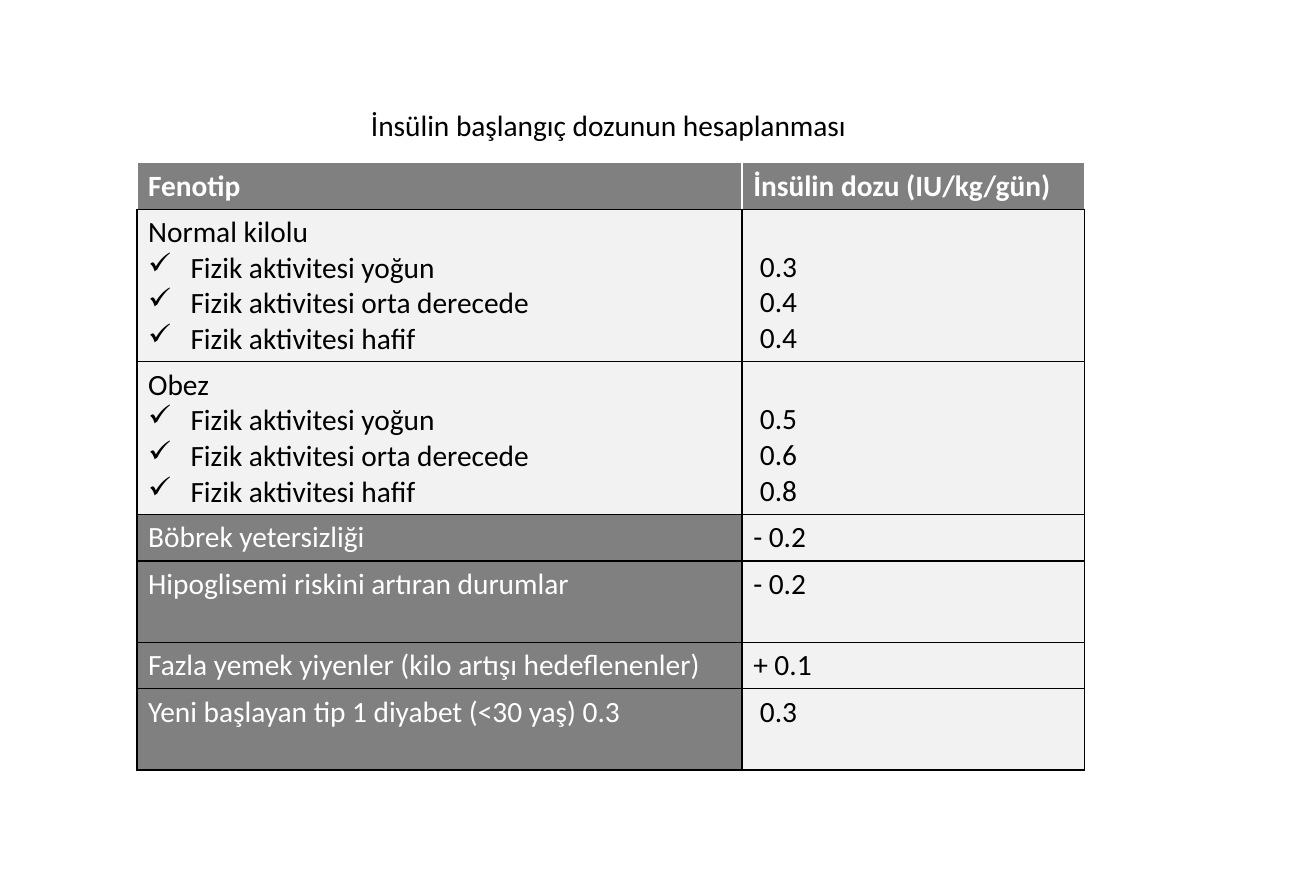
from dataclasses import dataclass

from lxml import etree
from pptx import Presentation
from pptx.dml.color import RGBColor
from pptx.enum.text import MSO_ANCHOR
from pptx.oxml.ns import qn
from pptx.util import Inches, Pt

TOP = MSO_ANCHOR.TOP
BOTTOM = MSO_ANCHOR.BOTTOM


@dataclass(frozen=True)
class Theme:
    font: str = "Calibri"
    size: float = 19
    border: float = 1
    black: str = "000000"
    white: str = "FFFFFF"
    dark: str = "808080"
    light: str = "F2F2F2"


THEME = Theme()
TITLE = "İnsülin başlangıç dozunun hesaplanması"
HEADINGS = ("Fenotip", "İnsülin dozu (IU/kg/gün)")
ACTIVITIES = (
    "Fizik aktivitesi yoğun",
    "Fizik aktivitesi orta derecede",
    "Fizik aktivitesi hafif",
)
WEIGHT_GROUPS = (
    ("Normal kilolu", ("0.3", "0.4", "0.4")),
    ("Obez", ("0.5", "0.6", "0.8")),
)
ADJUSTMENTS = (
    ("Böbrek yetersizliği", "- 0.2", 0.41, 0),
    ("Hipoglisemi riskini artıran durumlar", "- 0.2", 0.73, 0),
    ("Fazla yemek yiyenler (kilo artışı hedeflenenler)", "+ 0.1", 0.41, 0),
    ("Yeni başlayan tip 1 diyabet (<30 yaş) 0.3", "0.3", 0.73, 0.06),
)
COLUMN_WIDTHS = (5.43, 3.07)
HEADER_HEIGHT = 0.41
GROUP_HEIGHT = 1.37
CHECK_INDENT = 0.38
DOSE_INDENT = 0.06


def style_text(frame, color, bold=False):
    for paragraph in frame.paragraphs:
        for run in paragraph.runs:
            run.font.name = THEME.font
            run.font.size = Pt(THEME.size)
            run.font.bold = bold
            run.font.color.rgb = RGBColor.from_string(color)


def indent(paragraph, left, check=False):
    properties = paragraph._p.get_or_add_pPr()
    properties.set("marL", str(Inches(left)))
    properties.set("indent", str(-Inches(left) if check else 0))
    if check:
        etree.SubElement(properties, qn("a:buChar"), char="✓")


def set_borders(cell, colors):
    properties = cell._tc.get_or_add_tcPr()
    for side, color in zip(("lnL", "lnR", "lnT", "lnB"), colors):
        line = etree.SubElement(properties, qn(f"a:{side}"), w=str(Pt(THEME.border)))
        fill = etree.SubElement(line, qn("a:solidFill"))
        etree.SubElement(fill, qn("a:srgbClr"), val=color)


def fill_cell(cell, lines, fill, color, bold=False, anchor=TOP, edge=THEME.black):
    cell.text_frame.text = "\n".join(lines)
    style_text(cell.text_frame, color, bold)
    set_borders(cell, (edge, edge, edge, THEME.black))
    cell.fill.solid()
    cell.fill.fore_color.rgb = RGBColor.from_string(fill)
    cell.vertical_anchor = anchor
    return cell.text_frame.paragraphs


def add_title(slide, left, top, width, height):
    title = slide.shapes.add_textbox(
        Inches(left), Inches(top), Inches(width), Inches(height)
    )
    title.text_frame.word_wrap = True
    title.text_frame.text = TITLE
    style_text(title.text_frame, THEME.black)


def add_dose_table(slide, left, top):
    heights = [HEADER_HEIGHT]
    heights += [GROUP_HEIGHT] * len(WEIGHT_GROUPS)
    heights += [height for _, _, height, _ in ADJUSTMENTS]
    table = slide.shapes.add_table(
        len(heights), len(COLUMN_WIDTHS), Inches(left), Inches(top),
        Inches(sum(COLUMN_WIDTHS)), Inches(sum(heights)),
    ).table
    table.horz_banding = False
    for column, width in zip(table.columns, COLUMN_WIDTHS):
        column.width = Inches(width)
    for row, height in zip(table.rows, heights):
        row.height = Inches(height)

    for index, heading in enumerate(HEADINGS):
        fill_cell(table.cell(0, index), [heading], THEME.dark, THEME.white,
                  bold=True, edge=THEME.white)

    for row, (group, doses) in enumerate(WEIGHT_GROUPS, 1):
        phenotype = fill_cell(table.cell(row, 0), (group, *ACTIVITIES),
                              THEME.light, THEME.black)
        for activity in phenotype[1:]:
            indent(activity, CHECK_INDENT, check=True)
        for dose in fill_cell(table.cell(row, 1), doses, THEME.light,
                              THEME.black, anchor=BOTTOM):
            indent(dose, DOSE_INDENT)

    for row, (condition, change, _, offset) in enumerate(
        ADJUSTMENTS, 1 + len(WEIGHT_GROUPS)
    ):
        fill_cell(table.cell(row, 0), [condition], THEME.dark, THEME.white)
        dose = fill_cell(table.cell(row, 1), [change], THEME.light, THEME.black)[0]
        indent(dose, offset)


def main():
    deck = Presentation()
    deck.slide_width = Inches(11.81)
    deck.slide_height = Inches(7.95)
    slide = deck.slides.add_slide(deck.slide_layouts[6])
    add_title(slide, 3.23, 0.91, 4.52, 0.42)
    add_dose_table(slide, 1.23, 1.46)
    deck.save("out.pptx")


if __name__ == "__main__":
    main()
